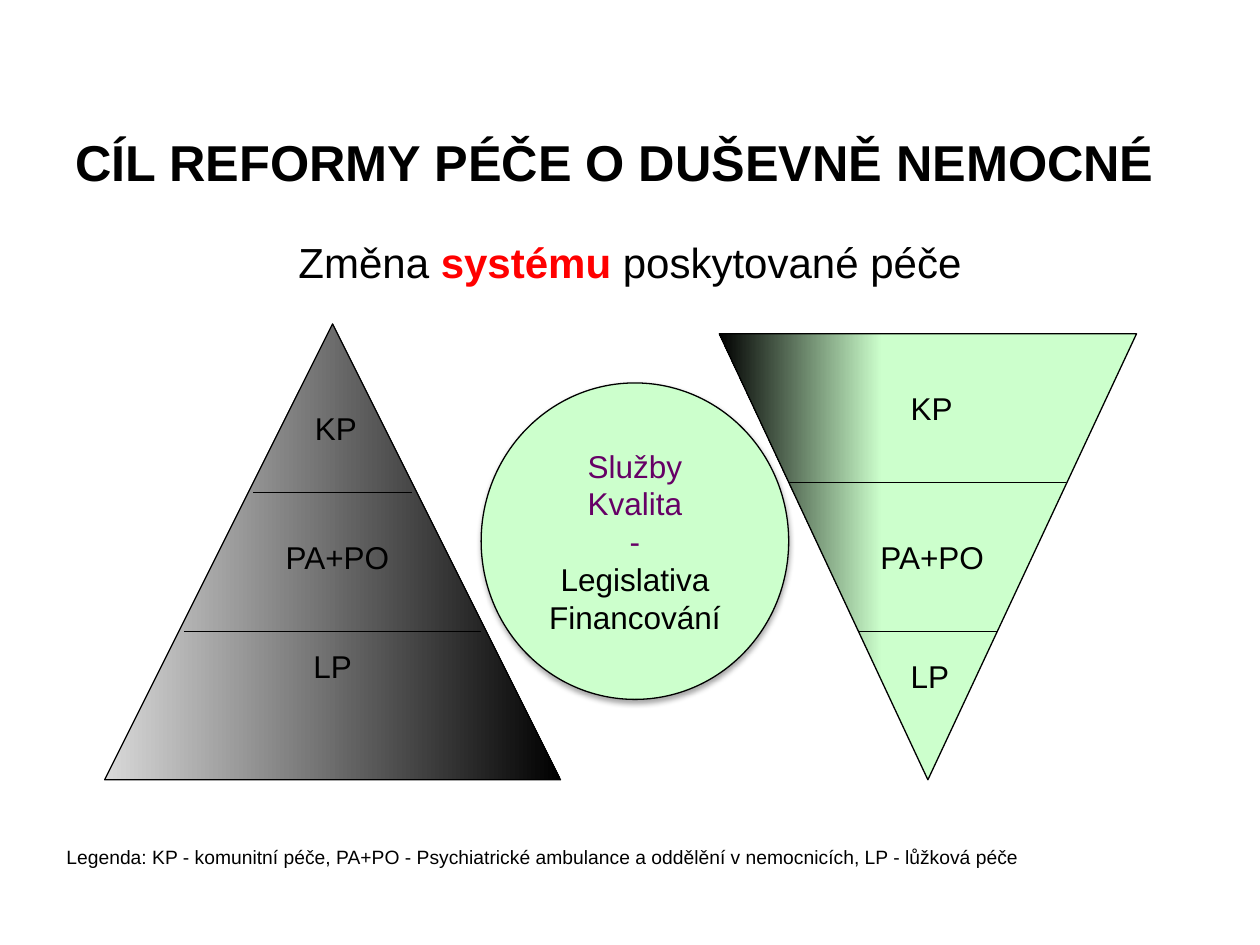
from lxml.etree import SubElement
from pptx import Presentation
from pptx.dml.color import RGBColor
from pptx.enum.shapes import MSO_CONNECTOR, MSO_SHAPE
from pptx.enum.text import MSO_ANCHOR, MSO_AUTO_SIZE, PP_ALIGN
from pptx.oxml.ns import qn
from pptx.util import Cm, Pt

COLORS = {"black": "000000", "red": "FF0000", "purple": "660066",
          "green": "CCFFCC", "gray": "D9D9D9"}

# A paragraph is a list of runs: (text, color, bold). Boxes are left, top, width, height in cm.
TITLE = [[("CÍL REFORMY PÉČE O DUŠEVNĚ NEMOCNÉ", "black", True)]]
SUBTITLE = [[("Změna ", "black", False), ("systému ", "red", True),
             ("poskytované péče", "black", False)]]
LEGEND = [[("Legenda: KP - komunitní péče, PA+PO - Psychiatrické ambulance a oddělění "
            "v nemocnicích, LP - lůžková péče", "black", False)]]
GOALS = [[(word, color, False)] for word, color in (
    ("Služby", "purple"), ("Kvalita", "purple"), ("-", "purple"),
    ("Legislativa", "black"), ("Financování", "black"))]
GOALS_BOX = (9.7, 7.72, 6.2, 6.38)

CURRENT_SYSTEM = {
    "box": (2.11, 6.53, 9.19, 9.19), "rotation": 0,
    "stops": [(0, "gray"), (1, "black")], "text": "LP",
    "dividers": [(9.93, 1.6), (12.73, 3)],  # height, half of the length
    "labels": [("PA+PO", 5.51, 10.72, 2.62), ("KP", 6.1, 8.13, 1.8)],
}
TARGET_SYSTEM = {
    "box": (14.5, 6.73, 8.41, 8.99), "rotation": 180,
    "stops": [(0.61, "green"), (1, "black")], "text": "",
    "dividers": [(9.73, 2.79), (12.73, 1.4)],
    "labels": [("KP", 18.11, 7.72, 1.35), ("PA+PO", 17.5, 10.72, 2.62),
               ("LP", 18.11, 13.13, 1.3)],
}
LABEL_HEIGHT = 1.02


def rgb(name):
    return RGBColor.from_string(COLORS[name])


def set_values(target, values):
    for name, value in values.items():
        setattr(target, name, value)


def write(shape, paragraphs, size, frame_format, paragraph_format):
    frame = shape.text_frame
    set_values(frame, frame_format)
    for index, runs in enumerate(paragraphs):
        paragraph = frame.add_paragraph() if index else frame.paragraphs[0]
        set_values(paragraph, paragraph_format)
        for text, color, bold in runs:
            run = paragraph.add_run()
            run.text = text
            set_values(run.font, {"name": "Arial", "size": Pt(size), "bold": bold})
            run.font.color.rgb = rgb(color)


def add_text(slide, box, paragraphs, size, frame_format, paragraph_format):
    shape = slide.shapes.add_textbox(*map(Cm, box))
    write(shape, paragraphs, size, frame_format, paragraph_format)


def add_label(slide, box, paragraphs, size):
    add_text(slide, box, paragraphs, size,
             {"word_wrap": False, "auto_size": MSO_AUTO_SIZE.SHAPE_TO_FIT_TEXT}, {})


def add_outlined(slide, kind, box, paragraphs):
    shape = slide.shapes.add_shape(kind, *map(Cm, box))
    shape.shadow.inherit = False
    shape.line.color.rgb = rgb("black")
    shape.line.width = Pt(0.75)
    write(shape, paragraphs, 18,
          {"word_wrap": True, "vertical_anchor": MSO_ANCHOR.MIDDLE},
          {"alignment": PP_ALIGN.CENTER})
    return shape


def add_divider(slide, center, top, half):
    line = slide.shapes.add_connector(
        MSO_CONNECTOR.STRAIGHT, Cm(center - half), Cm(top), Cm(center + half), Cm(top))
    line.line.color.rgb = rgb("black")
    line.line.width = Pt(0.75)
    SubElement(line._element.spPr, qn("a:effectLst"))


def add_system(slide, system):
    """Add a triangle of care levels with its dividers and labels."""
    text = system["text"]
    triangle = add_outlined(slide, MSO_SHAPE.ISOSCELES_TRIANGLE, system["box"],
                            [[(text, "black", False)]] if text else [])
    triangle.rotation = system["rotation"]
    triangle.fill.gradient()
    triangle.fill.gradient_angle = 0
    for stop, (position, color) in zip(triangle.fill.gradient_stops, system["stops"]):
        stop.position = position
        stop.color.rgb = rgb(color)
    left, _, width, _ = system["box"]
    for top, half in system["dividers"]:
        add_divider(slide, left + width / 2, top, half)
    for label, label_left, top, label_width in system["labels"]:
        add_label(slide, (label_left, top, label_width, LABEL_HEIGHT),
                  [[(label, "black", False)]], 18)


def add_goals(slide):
    circle = add_outlined(slide, MSO_SHAPE.OVAL, GOALS_BOX, GOALS)
    circle.fill.solid()
    circle.fill.fore_color.rgb = rgb("green")
    effects = circle._element.spPr.find(qn("a:effectLst"))
    shadow = SubElement(effects, qn("a:outerShdw"), blurRad=str(Pt(3.1)),
                        dist=str(Pt(1.8)), dir="5400000", rotWithShape="0")
    color = SubElement(shadow, qn("a:srgbClr"), val=COLORS["black"])
    SubElement(color, qn("a:alpha"), val="35000")


def main():
    presentation = Presentation()
    presentation.slide_width, presentation.slide_height = Cm(25.4), Cm(19.05)
    slide = presentation.slides.add_slide(presentation.slide_layouts[6])
    add_text(slide, (1.27, 1.85, 22.5, 2.79), TITLE, 28.8,
             {"word_wrap": True, "vertical_anchor": MSO_ANCHOR.MIDDLE}, {})
    add_text(slide, (1.27, 4.45, 22.86, 12.57), SUBTITLE, 24, {"word_wrap": True},
             {"alignment": PP_ALIGN.CENTER, "line_spacing": 1.2})
    add_system(slide, CURRENT_SYSTEM)
    add_goals(slide)
    add_system(slide, TARGET_SYSTEM)
    add_label(slide, (1.09, 16.92, 19.86, 0.74), LEGEND, 11)
    presentation.save("out.pptx")


if __name__ == "__main__":
    main()
